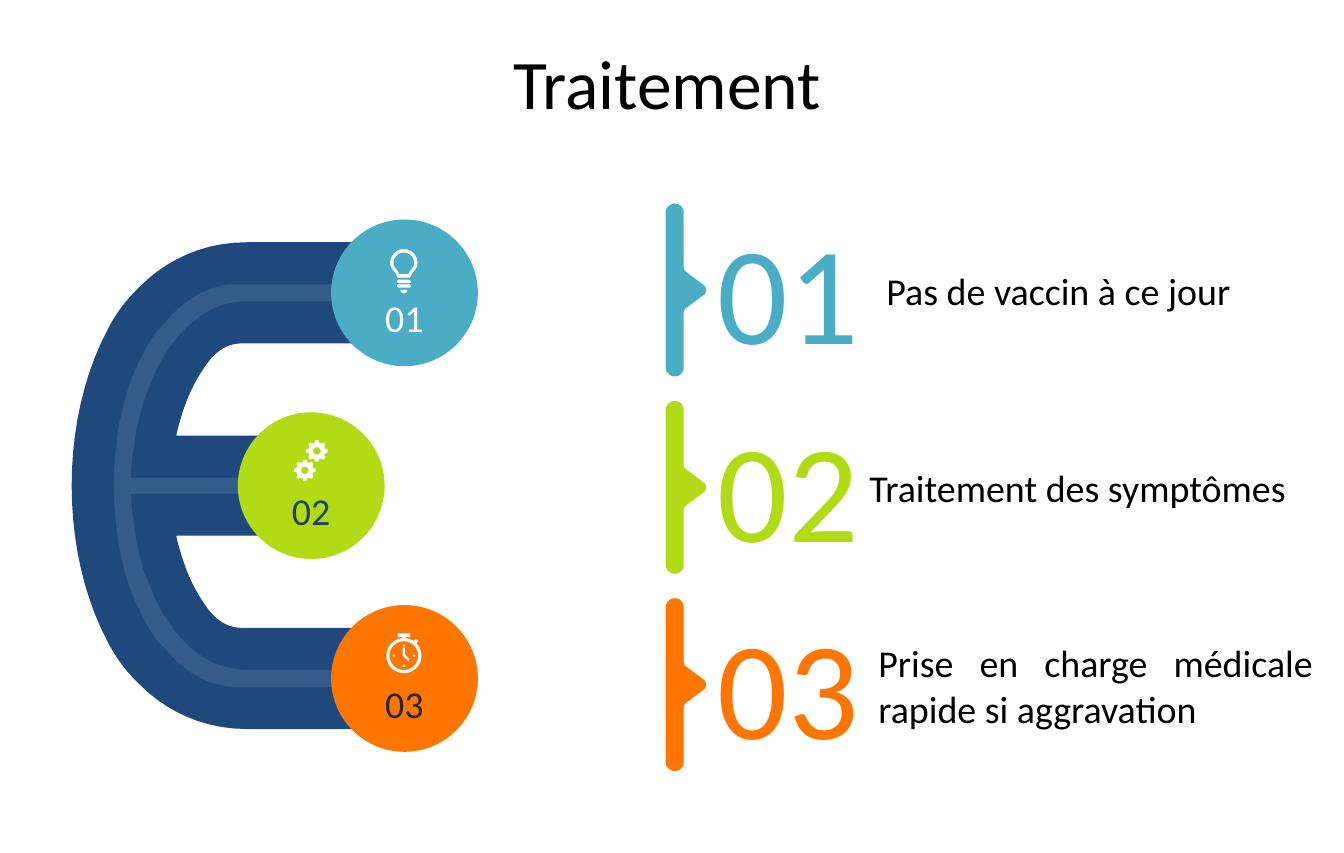
import math

from lxml import etree
from pptx import Presentation
from pptx import util as u
from pptx.dml.color import RGBColor
from pptx.enum import shapes, text
from pptx.oxml import ns

SLIDE_WIDTH, SLIDE_HEIGHT = u.Pt(850.5), u.Pt(540)
ROWS = 750
CELL = SLIDE_HEIGHT / ROWS
FONT = "Calibri"
COLORS = {
    "vaccine": "4BACC6", "symptoms": "B1DB15", "care": "FE7600",
    "band": "1F497D", "white": "FFFFFF", "black": "000000",
    "navy": "254061", "charcoal": "262626",
}

STEPS = [
    ("01", "Pas de vaccin à ce jour", "vaccine", "white", 355.5, 779, 50),
    ("02", "Traitement des symptômes", "symptoms", "navy", 273.5, 764, 50),
    ("03", "Prise en charge médicale rapide si aggravation",
     "care", "charcoal", 355.5, 772, 91),
]
BAND_AXIS, BALL_PITCH, BALL_SIZE = 427, 169.5, 129
MARKER_AXIS, MARKER_PITCH = 255, 173.5

BAND_HALF = [
    (63, 0), (63, -50, 74, -98, 94, -136), (102, -152, 112, -165, 124, -176),
    (146, -198, 178, -214, 217, -214), (356, -214),
    (381, -214, 402, -194, 402, -170), (402, -145, 381, -125, 356, -125),
    (217, -125), (203, -126, 193, -121, 184, -110),
    (174, -97, 166, -82, 160, -63), (158, -56, 156, -50, 155, -44),
    (272, -44), (297, -44, 316, -24, 316, 0),
]
STRIPE_HALF = [
    (100, 0), (100, -13, 101, -26, 103, -40), (104, -53, 107, -65, 110, -76),
    (114, -91, 120, -105, 127, -118), (132, -128, 138, -137, 145, -143),
    (162, -164, 183, -176, 206, -177), (357, -177),
    (361, -177, 366, -173, 366, -169), (366, -165, 361, -162, 357, -162),
    (218, -162), (207, -162, 196, -160, 186, -155),
    (166, -145, 149, -126, 136, -99), (126, -74), (120, -50), (116, -22),
    (115, -7), (272, -7), (276, -7, 280, -3, 280, 0),
]
MARKER_HALF = [
    (620.5, 0), (620.5, -2, 620, -3, 619, -4), (603, -16),
    (602, -17, 601, -18, 601, -20), (601, -68), (601, -72, 598, -76, 593, -76),
    (589, -76, 585, -72, 585, -68), (585, 0),
]
BULB = [
    (-12, 12), (-12, 5, -6, 0, 0, 0), (6, 0, 12, 5, 12, 12),
    (12, 18, 7, 20, 6, 24), (5, 25), (-5, 25), (-6, 24),
    (-7, 20, -12, 18, -12, 12),
]


def flatten(segments, pieces=10):
    points = []
    for segment in segments:
        if len(segment) == 2:
            points.append(segment)
            continue
        start = points[-1]
        controls = [start, segment[:2], segment[2:4], segment[4:]]
        for piece in range(1, pieces + 1):
            t = piece / pieces
            weights = ((1 - t) ** 3, 3 * t * (1 - t) ** 2,
                       3 * t * t * (1 - t), t ** 3)
            points.append(tuple(
                sum(w * c[axis] for w, c in zip(weights, controls))
                for axis in (0, 1)))
    return points


def mirrored(half):
    points = flatten(half)
    return points + [(x, -y) for x, y in reversed(points)]


def circle(radius, corners=24):
    return [(radius * math.cos(k * math.tau / corners),
             radius * math.sin(k * math.tau / corners)) for k in range(corners)]


def paint(shape, color):
    shape.fill.solid()
    shape.fill.fore_color.rgb = RGBColor.from_string(COLORS[color])
    shape.line.fill.background()
    shape.shadow.inherit = False
    return shape


def make_translucent(shape, percent):
    color = shape.fill._xPr.find(ns.qn("a:solidFill"))[0]
    etree.SubElement(color, ns.qn("a:alpha"), val=str(percent * 1000))


def add_outline(slide, loops, color, x=0, y=0):
    placed = [[((x + px) * CELL, (y + py) * CELL) for px, py in loop]
              for loop in loops]
    builder = slide.shapes.build_freeform(*placed[0][0], scale=1.0)
    builder.add_line_segments(placed[0][1:], close=True)
    for loop in placed[1:]:
        builder.move_to(*loop[0])
        builder.add_line_segments(loop[1:], close=True)
    return paint(builder.convert_to_shape(), color)


def box(x, y, width, height):
    return [u.Emu(round(v * CELL)) for v in (x, y, width, height)]


def add_preset(slide, kind, center_x, center_y, width, height, color):
    place = box(center_x - width / 2, center_y - height / 2, width, height)
    return paint(slide.shapes.add_shape(kind, *place), color)


def write(shape, words, size, color, align):
    paragraph = shape.text_frame.paragraphs[0]
    paragraph.alignment = align
    run = paragraph.add_run()
    run.text = words
    run.font.size = u.Pt(size)
    run.font.name = FONT
    run.font.color.rgb = RGBColor.from_string(COLORS[color])


def add_text(slide, place, words, size, color, align, wrap=True, side=10):
    area = slide.shapes.add_textbox(*box(*place))
    frame = area.text_frame
    frame.word_wrap = wrap
    frame.margin_left = frame.margin_right = round(side * CELL)
    write(area, words, size, color, align)
    return frame


def add_step(slide, number, words, color, label_x, label_height, axis):
    add_outline(slide, [mirrored(MARKER_HALF)], color, y=axis)
    add_text(slide, (621, axis - 79, 145, 158), number, 88, color,
             text.PP_ALIGN.LEFT, wrap=False)
    label = add_text(slide, (label_x, axis - label_height / 2, 382, label_height),
                     words, 24, "black", text.PP_ALIGN.JUSTIFY, side=0)
    label.vertical_anchor = text.MSO_ANCHOR.BOTTOM


def add_ball(slide, number, color, ink, x, y):
    ball = add_preset(slide, shapes.MSO_SHAPE.OVAL, x, y, BALL_SIZE, BALL_SIZE, color)
    frame = ball.text_frame
    frame.vertical_anchor = text.MSO_ANCHOR.BOTTOM
    frame.margin_left = frame.margin_right = round(4 * CELL)
    frame.margin_top = frame.margin_bottom = round(4 * CELL)
    write(ball, number, 24, ink, text.PP_ALIGN.CENTER)


def add_bulb(slide, x, y):
    glass = flatten(BULB)
    hollow = [(px * 0.76, 3 + py * 0.76) for px, py in glass]
    add_outline(slide, [glass, hollow], "white", x, y)
    for offset in (28.5, 32.5):
        ring = add_preset(slide, shapes.MSO_SHAPE.ROUNDED_RECTANGLE,
                          x, y + offset, 12, 3, "white")
        ring.adjustments[0] = 0.5
    add_outline(slide, [flatten([(-3, 0), (-3, 4, 3, 4, 3, 0)])], "white", x, y + 36)


def add_gear(slide, x, y, teeth=8):
    rim = []
    for tooth in range(teeth):
        for turn, radius in ((-0.25, 7.6), (-0.13, 9.5), (0.13, 9.5), (0.25, 7.6)):
            angle = tooth * math.tau / teeth + turn
            rim.append((radius * math.cos(angle), radius * math.sin(angle)))
    add_outline(slide, [rim, circle(3.3)], "white", x, y)


def add_stopwatch(slide, x, y):
    dial = add_preset(slide, shapes.MSO_SHAPE.DONUT, x, y, 31, 31, "white")
    dial.adjustments[0] = 0.09
    add_preset(slide, shapes.MSO_SHAPE.RECTANGLE, x, y - 18, 11, 3, "white")
    add_preset(slide, shapes.MSO_SHAPE.RECTANGLE, x, y - 15.5, 2.5, 3, "white")
    for dx, dy in ((0, -9), (9, 0), (0, 9), (-9, 0)):
        add_preset(slide, shapes.MSO_SHAPE.OVAL, x + dx, y + dy, 2, 2, "white")
    hands = [(-1, -7), (1, -7), (1, -1), (5, 3), (4, 5), (-1, 0)]
    button = [(8, -12), (10.5, -15), (12.5, -13), (10.5, -10)]
    for part in (hands, button):
        add_outline(slide, [part], "white", x, y)


def main():
    deck = Presentation()
    deck.slide_width, deck.slide_height = SLIDE_WIDTH, SLIDE_HEIGHT
    slide = deck.slides.add_slide(deck.slide_layouts[6])
    for index, (number, words, color, _, _, label_x, height) in enumerate(STEPS):
        add_step(slide, number, words, color, label_x, height,
                 MARKER_AXIS + index * MARKER_PITCH)
    add_outline(slide, [mirrored(BAND_HALF)], "band", y=BAND_AXIS)
    stripe = add_outline(slide, [mirrored(STRIPE_HALF)], "white", y=BAND_AXIS)
    make_translucent(stripe, 10)
    for index, (number, _, color, ink, ball_x, _, _) in enumerate(STEPS):
        add_ball(slide, number, color, ink, ball_x,
                 BAND_AXIS + (index - 1) * BALL_PITCH)
    add_gear(slide, 278.5, 396.5)
    add_gear(slide, 268, 413.5)
    add_stopwatch(slide, 355, 576.5)
    add_bulb(slide, 355, 219)
    add_text(slide, (55, 30, 1063, 125), "Traitement", 44, "black",
             text.PP_ALIGN.CENTER)
    deck.save("out.pptx")


if __name__ == "__main__":
    main()
